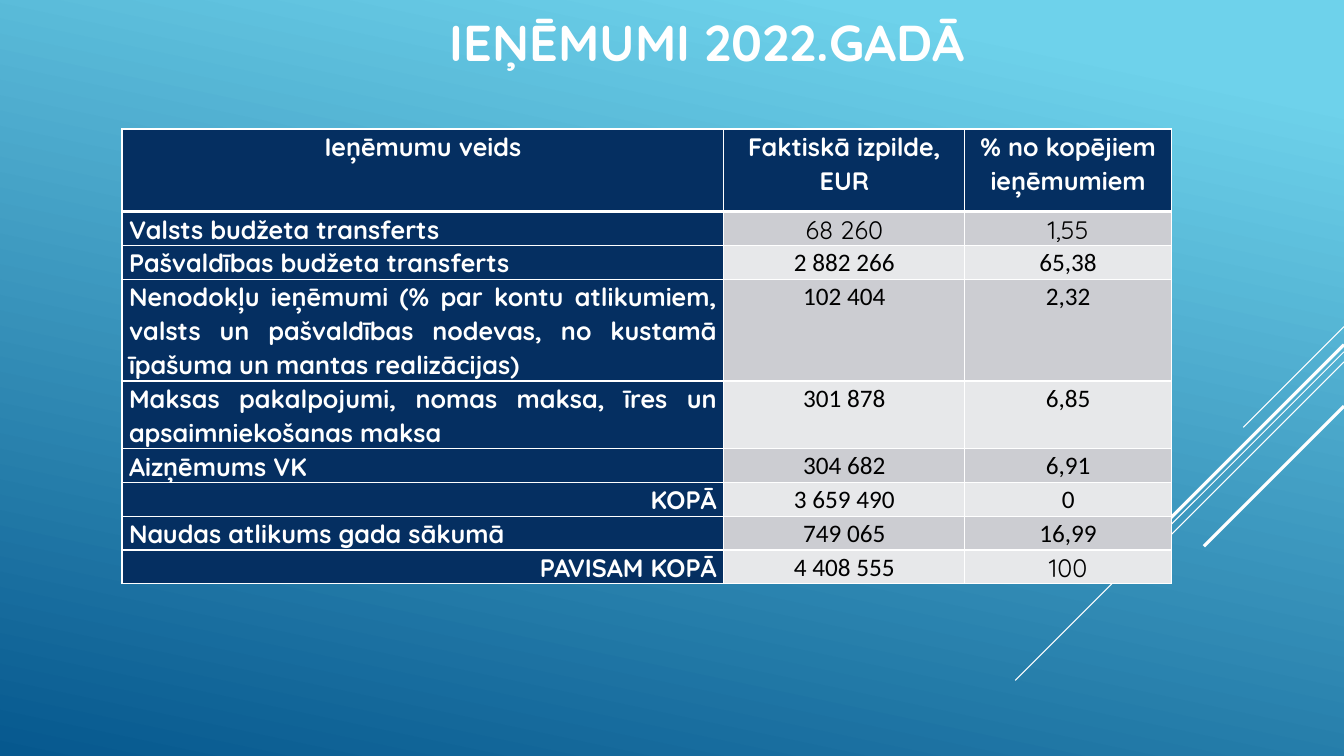
from dataclasses import dataclass

from lxml import etree
from pptx import Presentation
from pptx.dml.color import RGBColor
from pptx.enum.shapes import MSO_CONNECTOR
from pptx.enum.text import MSO_ANCHOR, PP_ALIGN
from pptx.oxml.ns import qn
from pptx.slide import Slide
from pptx.table import _Cell
from pptx.text.text import TextFrame
from pptx.util import Inches, Pt

STRAIGHT = MSO_CONNECTOR.STRAIGHT
MIDDLE = MSO_ANCHOR.MIDDLE
LEFT, CENTER, RIGHT, JUSTIFY = PP_ALIGN.LEFT, PP_ALIGN.CENTER, PP_ALIGN.RIGHT, PP_ALIGN.JUSTIFY

WHITE = RGBColor(0xFF, 0xFF, 0xFF)
BLACK = RGBColor(0x00, 0x00, 0x00)
NAVY = RGBColor(0x05, 0x2F, 0x61)
DARK_BAND = RGBColor(0xCC, 0xCD, 0xD2)
LIGHT_BAND = RGBColor(0xE7, 0xE8, 0xEA)
SKY = RGBColor(0x6E, 0xD2, 0xEB)
OCEAN = RGBColor(0x06, 0x58, 0x8E)

HEADING_FONT = "Quicksand"
FIGURE_FONT = "Calibri"
SLIDE_WIDTH = 13.33
COLUMN_WIDTHS = (5.97, 2.39, 2.05)
HEADER_HEIGHT = 0.82
HEADER_RULE = 3
CELL_RULE = 1
HEADINGS = ("Ieņēmumu veids", "Faktiskā izpilde,\nEUR", "% no kopējiem ieņēmumiem")


@dataclass(frozen=True)
class Ray:
    top: float
    run: float
    weight: float


@dataclass(frozen=True)
class Income:
    label: str
    amount: str
    share: str
    align: PP_ALIGN = JUSTIFY
    height: float = 0.33
    amount_font: str = FIGURE_FONT
    share_font: str = FIGURE_FONT


RAYS = (
    Ray(3.24, 1.0, 0.75),
    Ray(3.49, 3.26, 0.75),
    Ray(3.59, 2.07, 0.75),
    Ray(3.42, 1.91, 2.25),
    Ray(4.03, 1.39, 2.25),
)

INCOMES = (
    Income("Valsts budžeta transferts", "68 260", "1,55",
           amount_font=HEADING_FONT, share_font=HEADING_FONT),
    Income("Pašvaldības budžeta transferts", "2 882 266", "65,38"),
    Income("Nenodokļu ieņēmumi (% par kontu atlikumiem, valsts un pašvaldības nodevas, "
           "no kustamā īpašuma un mantas realizācijas)", "102 404", "2,32", height=1.01),
    Income("Maksas pakalpojumi, nomas maksa, īres un apsaimniekošanas maksa",
           "301 878", "6,85", height=0.67),
    Income("Aizņēmums VK", "304 682", "6,91"),
    Income("KOPĀ", "3 659 490", "0", RIGHT),
    Income("Naudas atlikums gada sākumā", "749 065", "16,99", LEFT),
    Income("PAVISAM KOPĀ", "4 408 555", "100", RIGHT, share_font=HEADING_FONT),
)


def write(frame: TextFrame, text: str, align: PP_ALIGN, font_name: str,
          size: int, color: RGBColor, bold: bool) -> None:
    frame.text = text
    for paragraph in frame.paragraphs:
        paragraph.alignment = align
        for run in paragraph.runs:
            run.font.name = font_name
            run.font.size = Pt(size)
            run.font.bold = bold
            run.font.color.rgb = color


def add_cell_borders(cell: _Cell, top: float, bottom: float) -> None:
    properties = cell._tc.get_or_add_tcPr()
    for side, weight in (("L", CELL_RULE), ("R", CELL_RULE), ("T", top), ("B", bottom)):
        border = etree.SubElement(properties, qn(f"a:ln{side}"), w=str(Pt(weight)))
        fill = etree.SubElement(border, qn("a:solidFill"))
        etree.SubElement(fill, qn("a:srgbClr"), val=str(WHITE))


def fill_cell(cell: _Cell, text: str, align: PP_ALIGN, font_name: str, background: RGBColor,
              top: float = CELL_RULE, bottom: float = CELL_RULE) -> None:
    on_navy = background == NAVY
    add_cell_borders(cell, top, bottom)
    cell.fill.solid()
    cell.fill.fore_color.rgb = background
    cell.margin_left = cell.margin_right = Inches(0.07)
    cell.margin_top = cell.margin_bottom = 0
    write(cell.text_frame, text, align, font_name, 18, WHITE if on_navy else BLACK, on_navy)
    for paragraph in cell.text_frame.paragraphs:
        paragraph.line_spacing = 1.07


def paint_background(slide: Slide) -> None:
    fill = slide.background.fill
    fill.gradient()
    fill.gradient_angle = 258
    for stop, position, color in zip(fill.gradient_stops, (0.1, 1.0), (SKY, OCEAN)):
        stop.position = position
        stop.color.rgb = color


def add_ray(slide: Slide, ray: Ray) -> None:
    line = slide.shapes.add_connector(
        STRAIGHT, Inches(SLIDE_WIDTH), Inches(ray.top),
        Inches(SLIDE_WIDTH - ray.run), Inches(ray.top + ray.run))
    line.line.color.rgb = WHITE
    line.line.width = Pt(ray.weight)
    etree.SubElement(line.element.spPr, qn("a:effectLst"))


def add_title(slide: Slide) -> None:
    title = slide.shapes.title
    title.left, title.top = Inches(1.21), Inches(0)
    title.width, title.height = Inches(11.61), Inches(0.82)
    title.text_frame.vertical_anchor = MIDDLE
    write(title.text_frame, "IEŅĒMUMI 2022.GADĀ", CENTER, HEADING_FONT, 36, WHITE, True)


def add_income_table(slide: Slide) -> None:
    heights = [HEADER_HEIGHT] + [income.height for income in INCOMES]
    table = slide.shapes.add_table(
        len(heights), len(COLUMN_WIDTHS), Inches(1.21), Inches(1.28),
        Inches(sum(COLUMN_WIDTHS)), Inches(sum(heights))).table
    for column, width in zip(table.columns, COLUMN_WIDTHS):
        column.width = Inches(width)
    for row, height in zip(table.rows, heights):
        row.height = Inches(height)
    for column, heading in enumerate(HEADINGS):
        fill_cell(table.cell(0, column), heading, CENTER, HEADING_FONT, NAVY, bottom=HEADER_RULE)
    for row, income in enumerate(INCOMES, start=1):
        band = DARK_BAND if row % 2 else LIGHT_BAND
        top = HEADER_RULE if row == 1 else CELL_RULE
        fill_cell(table.cell(row, 0), income.label, income.align, HEADING_FONT, NAVY, top)
        fill_cell(table.cell(row, 1), income.amount, CENTER, income.amount_font, band, top)
        fill_cell(table.cell(row, 2), income.share, CENTER, income.share_font, band, top)


def main() -> None:
    presentation = Presentation()
    presentation.slide_width = Inches(SLIDE_WIDTH)
    presentation.slide_height = Inches(7.5)
    slide = presentation.slides.add_slide(presentation.slide_layouts.get_by_name("Title Only"))
    paint_background(slide)
    add_title(slide)
    for ray in RAYS:
        add_ray(slide, ray)
    add_income_table(slide)
    presentation.save("out.pptx")


if __name__ == "__main__":
    main()
